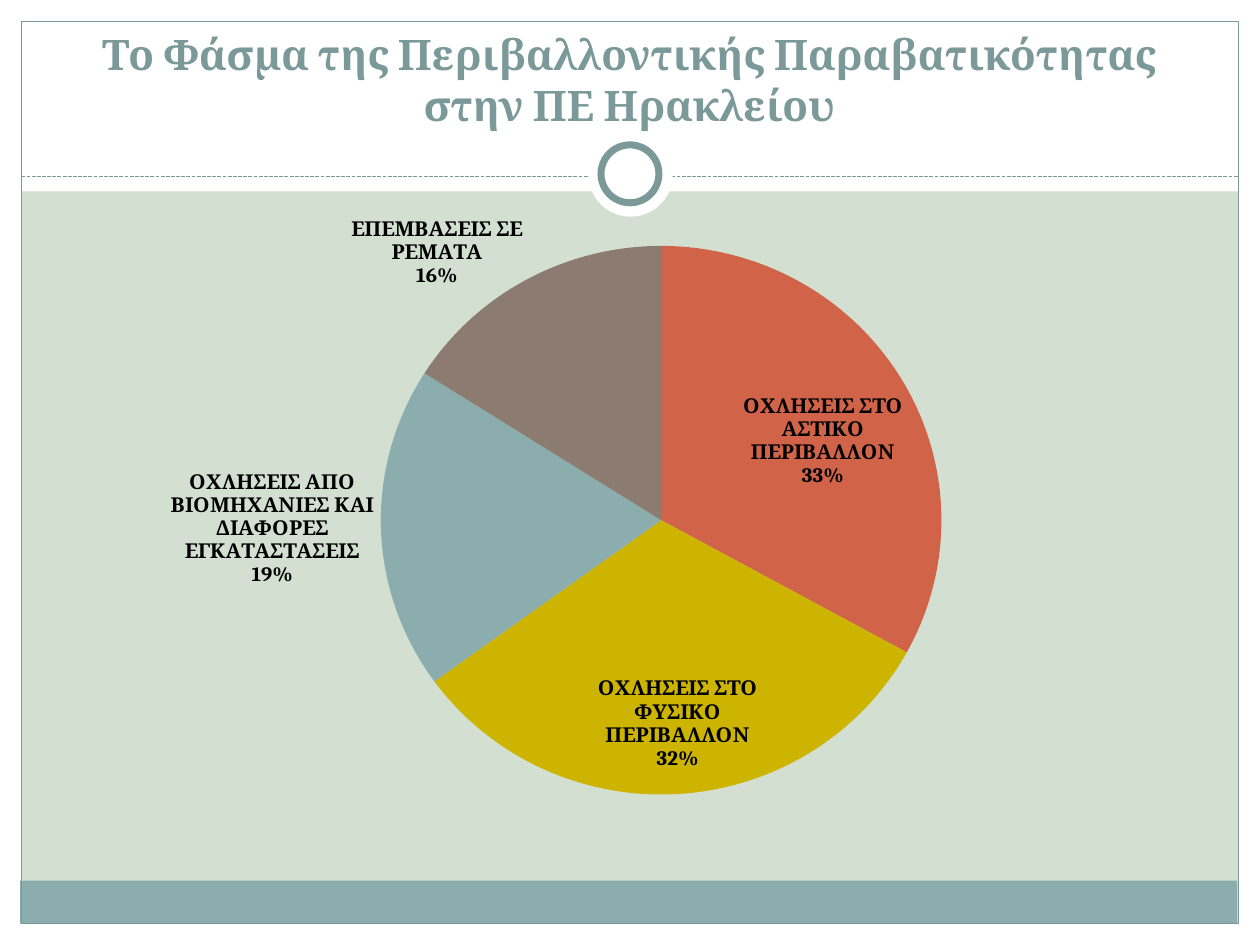
import pptx
import pptx.chart.data
import pptx.dml.color
import pptx.enum.chart
import pptx.enum.dml
import pptx.enum.shapes
import pptx.enum.text
import pptx.oxml
import pptx.oxml.ns
import pptx.util
from lxml import etree

Inches = pptx.util.Inches
Pt = pptx.util.Pt
SHAPES = pptx.enum.shapes.MSO_SHAPE

FONT = "Cambria"
WHITE, SAGE, TEAL, SLATE, BLACK = "FFFFFF", "D2DFD1", "8CADAE", "7C999A", "000000"
OFFENCES = [
    ("ΟΧΛΗΣΕΙΣ ΣΤΟ ΑΣΤΙΚΟ ΠΕΡΙΒΑΛΛΟΝ", 33, "D16349"),
    ("ΟΧΛΗΣΕΙΣ ΣΤΟ ΦΥΣΙΚΟ ΠΕΡΙΒΑΛΛΟΝ", 32, "CCB400"),
    ("ΟΧΛΗΣΕΙΣ ΑΠΟ ΒΙΟΜΗΧΑΝΙΕΣ ΚΑΙ ΔΙΑΦΟΡΕΣ ΕΓΚΑΤΑΣΤΑΣΕΙΣ", 19, TEAL),
    ("ΕΠΕΜΒΑΣΕΙΣ ΣΕ ΡΕΜΑΤΑ", 16, "8C7B70"),
]
PLOT_AREA = {"x": 0.079, "y": 0.044, "w": 0.893, "h": 0.864}


def color(hex_text):
    return pptx.dml.color.RGBColor.from_string(hex_text)


def set_font(font, hex_color, **formats):
    font.color.rgb = color(hex_color)
    for name, value in formats.items():
        setattr(font, name, value)


class SlideBuilder:
    def __init__(self, slide, font):
        self.slide = slide
        self.font = font

    def background(self, hex_color):
        fill = self.slide.background.fill
        fill.solid()
        fill.fore_color.rgb = color(hex_color)

    def shape(self, kind, box, fill=None, line=None, width=0.75):
        shape = self.slide.shapes.add_shape(kind, *map(Inches, box))
        shape.shadow.inherit = False
        if fill:
            shape.fill.solid()
            shape.fill.fore_color.rgb = color(fill)
        else:
            shape.fill.background()
        if line:
            shape.line.color.rgb = color(line)
            shape.line.width = Pt(width)
        else:
            shape.line.fill.background()

    def dashed_rule(self, left, right, top, hex_color):
        rule = self.slide.shapes.add_connector(
            pptx.enum.shapes.MSO_CONNECTOR.STRAIGHT,
            Inches(left), Inches(top), Inches(right), Inches(top))
        rule.line.color.rgb = color(hex_color)
        rule.line.width = Pt(0.75)
        rule.line.dash_style = pptx.enum.dml.MSO_LINE.SQUARE_DOT
        etree.SubElement(rule.element.spPr, pptx.oxml.ns.qn("a:effectLst"))

    def pie(self, box, rows):
        data = pptx.chart.data.CategoryChartData()
        data.categories = [name for name, _, _ in rows]
        data.add_series("Series 1", [share for _, share, _ in rows])
        chart = self.slide.shapes.add_chart(
            pptx.enum.chart.XL_CHART_TYPE.PIE, *map(Inches, box), data).chart
        chart.has_legend = chart.has_title = False
        set_font(chart.font, BLACK, name=self.font, size=Pt(10))
        plot = chart.plots[0]
        plot.vary_by_categories = True
        for index, (_, _, hex_color) in enumerate(rows):
            wedge = plot.series[0].points[index].format
            wedge.fill.solid()
            wedge.fill.fore_color.rgb = color(hex_color)
            wedge.line.fill.background()

        # Labels with category and share
        labels = plot.series[0].data_labels
        formats = {
            "show_category_name": True,
            "show_percentage": True,
            "show_value": False,
            "number_format": "0%",
            "number_format_is_linked": False,
            "position": pptx.enum.chart.XL_LABEL_POSITION.BEST_FIT,
        }
        for name, value in formats.items():
            setattr(labels, name, value)
        set_font(labels.font, BLACK, name=self.font, size=Pt(12), bold=True)
        self.place_plot(chart)

    def place_plot(self, chart):
        qn = pptx.oxml.ns.qn
        plot_area = chart.element.find(".//" + qn("c:plotArea"))
        layout = plot_area.find(qn("c:layout"))
        if layout is None:
            layout = etree.Element(qn("c:layout"))
            plot_area.insert(0, layout)
        manual = etree.SubElement(layout, qn("c:manualLayout"))
        settings = {"layoutTarget": "inner", "xMode": "edge", "yMode": "edge", **PLOT_AREA}
        for name, value in settings.items():
            etree.SubElement(manual, qn("c:" + name)).set("val", str(value))

    def title(self, text, box, hex_color, size):
        title = self.slide.shapes.title
        title.left, title.top, title.width, title.height = map(Inches, box)
        frame = title.text_frame
        frame.text = text
        formats = {
            "word_wrap": True,
            "auto_size": pptx.enum.text.MSO_AUTO_SIZE.NONE,
            "vertical_anchor": pptx.enum.text.MSO_ANCHOR.BOTTOM,
        }
        for name, value in formats.items():
            setattr(frame, name, value)
        heading = frame.paragraphs[0]
        heading.alignment = pptx.enum.text.PP_ALIGN.CENTER
        set_font(heading.runs[0].font, hex_color, name=self.font, size=Pt(size), bold=True)
        # Bring the title in front of the white header band
        title.element.getparent().append(title.element)


def main():
    deck = pptx.Presentation()
    deck.slide_width, deck.slide_height = Inches(10), Inches(7.5)
    page = SlideBuilder(deck.slides.add_slide(deck.slide_layouts[5]), FONT)
    page.background(SAGE)

    # White margins and header
    for band in [(0, 7.33, 10, 0.17), (0, 0, 10, 1.52),
                 (0, 0, 0.17, 7.5), (9.83, 0, 0.17, 7.5)]:
        page.shape(SHAPES.RECTANGLE, band, fill=WHITE)

    # Footer band, frame and header rule
    page.shape(SHAPES.RECTANGLE, (0.16, 6.99, 9.66, 0.34), fill=TEAL)
    page.shape(SHAPES.RECTANGLE, (0.17, 0.17, 9.66, 7.16), line=SLATE)
    page.dashed_rule(0.17, 9.83, 1.4, SLATE)

    # Ring on the header rule
    page.shape(SHAPES.OVAL, (4.67, 1.05, 0.67, 0.67), fill=WHITE)
    page.shape(SHAPES.OVAL, (4.77, 1.15, 0.46, 0.46), fill=WHITE, line=SLATE, width=4)

    # Content
    page.pie((0.35, 1.62, 9.32, 5.15), OFFENCES)
    page.title("Το Φάσμα της Περιβαλλοντικής Παραβατικότητας στην ΠΕ Ηρακλείου",
               (0.33, 0.28, 9.33, 0.8), SLATE, 24)

    deck.save("out.pptx")


if __name__ == "__main__":
    main()
